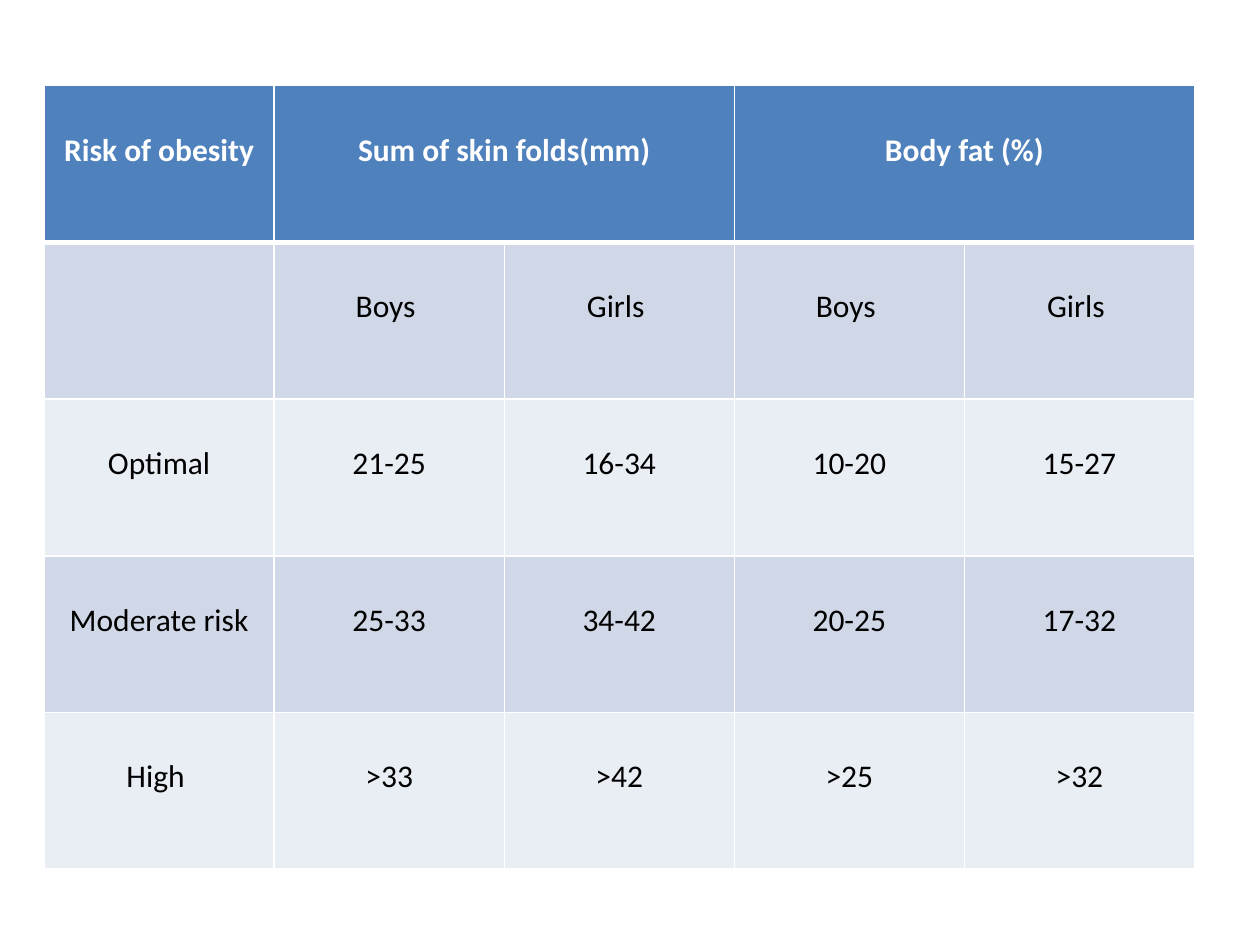
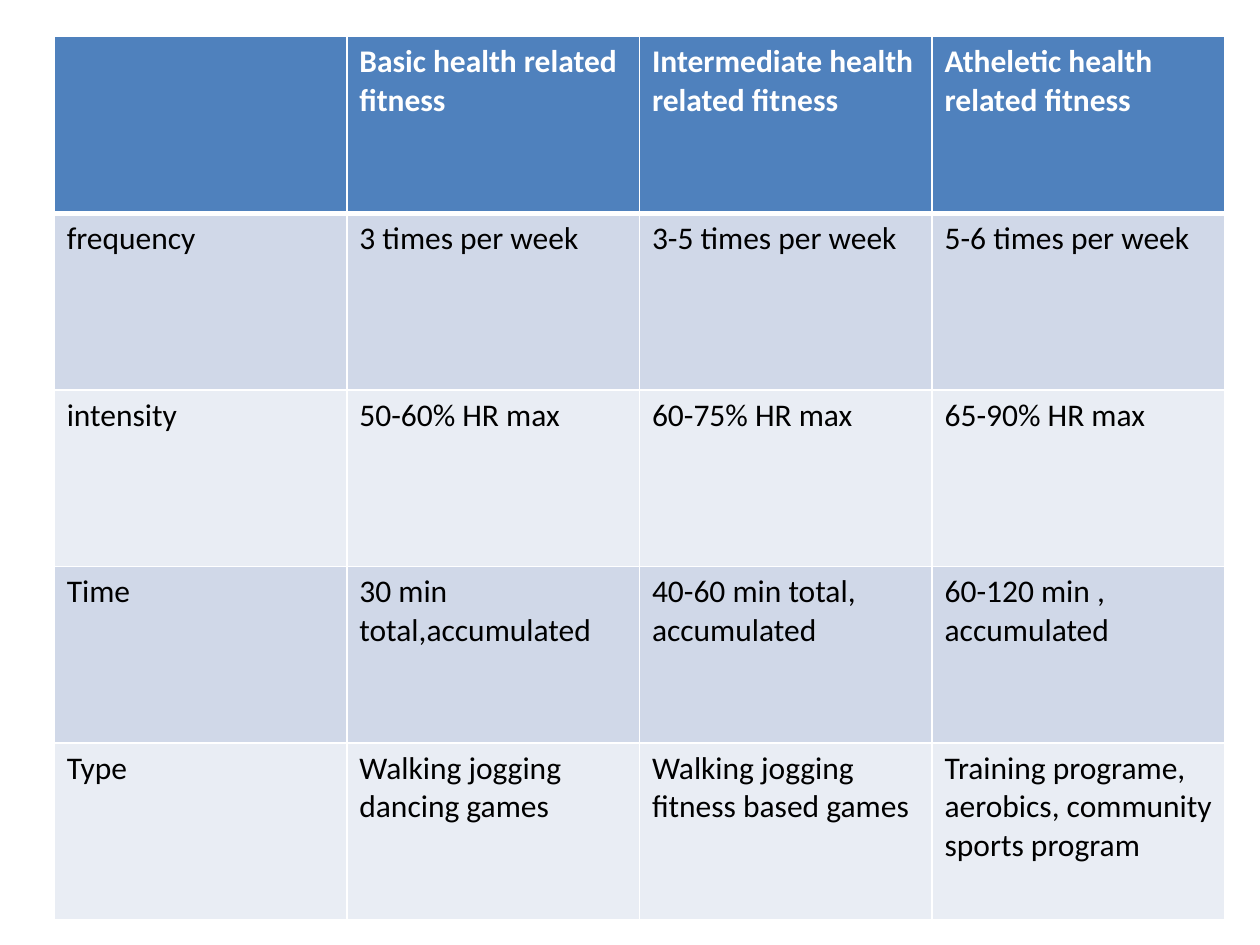
from dataclasses import dataclass

from lxml.etree import SubElement
from pptx import Presentation
from pptx.dml.color import RGBColor
from pptx.enum.text import PP_ALIGN
from pptx.oxml.ns import qn
from pptx.presentation import Presentation as Deck
from pptx.table import _Cell as Cell
from pptx.util import Inches, Pt

# Shared look
WHITE = RGBColor(0xFF, 0xFF, 0xFF)
BLACK = RGBColor(0x00, 0x00, 0x00)
HEADER_BLUE = RGBColor(0x4F, 0x81, 0xBD)
BAND_DARK = RGBColor(0xD0, 0xD8, 0xE8)
BAND_LIGHT = RGBColor(0xE9, 0xED, 0xF4)
BODY_FONT = {"name": "Calibri", "size": Pt(18), "bold": False}
HEADER_FONT = BODY_FONT | {"bold": True}
THIN, THICK = Pt(1), Pt(3)
BLANK_LAYOUT = 6


@dataclass(frozen=True)
class TableSpec:
    left: float
    top: float
    width: float
    height: float
    rows: list[list[str]]
    alignment: PP_ALIGN = PP_ALIGN.LEFT
    margin_top: float = 0.05
    header_span: int = 1  # columns under each header after the first


OBESITY_RISK = TableSpec(
    0.35, 0.68, 9.13, 6.22,
    [
        ["Risk of obesity", "Sum of skin folds(mm)", "", "Body fat (%)", ""],
        ["", "Boys ", "Girls ", "Boys ", "Girls "],
        ["Optimal", "21-25", "16-34", "10-20", "15-27"],
        ["Moderate risk", "25-33", "34-42", "20-25", "17-32"],
        ["High ", ">33", ">42", ">25", ">32"],
    ],
    alignment=PP_ALIGN.CENTER, margin_top=0.36, header_span=2,
)

FITNESS_LEVELS = TableSpec(
    0.43, 0.29, 9.29, 7.01,
    [
        ["", "Basic health related fitness", "Intermediate health related fitness",
         "Atheletic health related fitness"],
        ["frequency", "3 times per week", "3-5 times per week", "5-6 times per week"],
        ["intensity", "50-60% HR max", "60-75% HR max", "65-90% HR max"],
        ["Time", "30 min total,accumulated", "40-60 min total, accumulated",
         "60-120 min , accumulated"],
        ["Type", "Walking jogging dancing games", "Walking jogging fitness based games",
         "Training programe, aerobics, community sports program"],
    ],
)


def set_borders(cell: Cell, row_index: int) -> None:
    """Draw white rules, thick between the header and the body."""
    widths = {
        "a:lnL": THIN,
        "a:lnR": THIN,
        "a:lnT": THICK if row_index == 1 else THIN,
        "a:lnB": THICK if row_index == 0 else THIN,
    }
    properties = cell._tc.get_or_add_tcPr()
    for position, (tag, width) in enumerate(widths.items()):
        line = SubElement(properties, qn(tag), w=str(int(width)))
        fill = SubElement(line, qn("a:solidFill"))
        SubElement(fill, qn("a:srgbClr"), val=str(WHITE))
        properties.insert(position, line)


def format_cell(cell: Cell, text: str, row_index: int, spec: TableSpec) -> None:
    is_header = row_index == 0
    band = BAND_DARK if row_index % 2 else BAND_LIGHT
    cell.fill.solid()
    cell.fill.fore_color.rgb = HEADER_BLUE if is_header else band
    cell.margin_top = Inches(spec.margin_top)
    set_borders(cell, row_index)

    paragraph = cell.text_frame.paragraphs[0]
    paragraph.alignment = spec.alignment
    if text:
        paragraph.add_run().text = text
    for font in [paragraph.font, *(run.font for run in paragraph.runs)]:
        for name, value in (HEADER_FONT if is_header else BODY_FONT).items():
            setattr(font, name, value)
        font.color.rgb = WHITE if is_header else BLACK


def add_table_slide(presentation: Deck, spec: TableSpec) -> None:
    slide = presentation.slides.add_slide(presentation.slide_layouts[BLANK_LAYOUT])
    column_count = len(spec.rows[0])
    table = slide.shapes.add_table(
        len(spec.rows), column_count,
        Inches(spec.left), Inches(spec.top), Inches(spec.width), Inches(spec.height),
    ).table

    for row_index, row in enumerate(spec.rows):
        for column_index, text in enumerate(row):
            format_cell(table.cell(row_index, column_index), text, row_index, spec)

    # Group headings cover several columns
    if spec.header_span > 1:
        for start in range(1, column_count, spec.header_span):
            table.cell(0, start).merge(table.cell(0, start + spec.header_span - 1))


def main() -> None:
    presentation = Presentation()
    presentation.slide_width = Inches(10)
    presentation.slide_height = Inches(7.5)
    for spec in (OBESITY_RISK, FITNESS_LEVELS):
        add_table_slide(presentation, spec)
    presentation.save("out.pptx")


if __name__ == "__main__":
    main()
